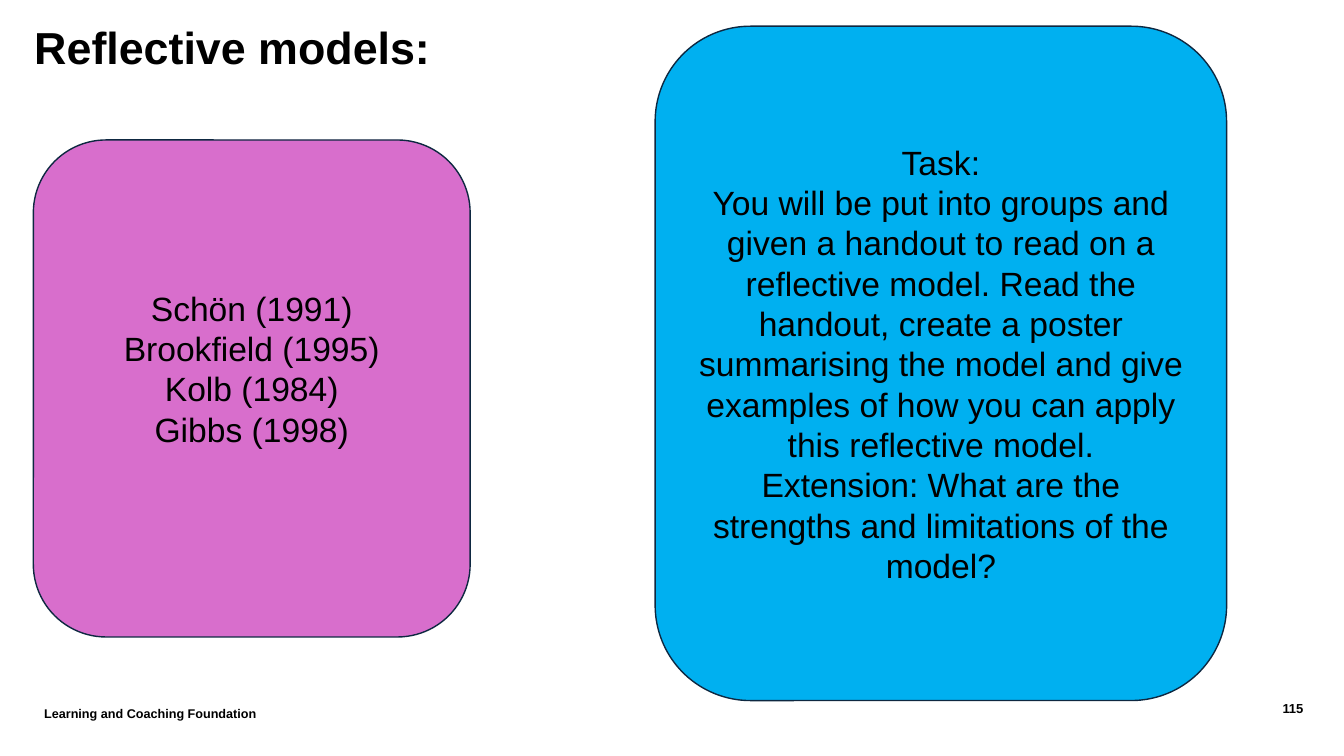
from pptx import Presentation
from pptx.dml.color import RGBColor
from pptx.enum.shapes import MSO_SHAPE
from pptx.enum.text import MSO_ANCHOR, PP_ALIGN
from pptx.util import Pt

BLACK = RGBColor(0x00, 0x00, 0x00)
NAVY = RGBColor(0x0E, 0x28, 0x41)
PINK = RGBColor(0xD8, 0x6E, 0xCC)
BLUE = RGBColor(0x00, 0xB0, 0xF0)

MODELS = ["Schön (1991)", "Brookfield (1995)", "Kolb (1984)", "Gibbs (1998)"]
TASK = [
    "Task:",
    "You will be put into groups and given a handout to read on a reflective "
    "model. Read the handout, create a poster summarising the model and give "
    "examples of how you can apply this reflective model.",
    "Extension: What are the strengths and limitations of the model?",
]


def set_attrs(target, values):
    for name, value in values.items():
        setattr(target, name, value)


def write(tf, lines, size, bold=False, align=PP_ALIGN.LEFT, spacing=None):
    tf.word_wrap = True
    for i, line in enumerate(lines):
        p = tf.paragraphs[0] if i == 0 else tf.add_paragraph()
        set_attrs(p, {"alignment": align, "line_spacing": spacing})
        r = p.add_run()
        r.text = line
        set_attrs(r.font, {"name": "Arial", "size": Pt(size), "bold": bold})
        r.font.color.rgb = BLACK


def add_label(s, box, text, size, inset=True, **layout):
    sp = s.shapes.add_textbox(*map(Pt, box))
    tf = sp.text_frame
    if not inset:
        sides = ("left", "top", "right", "bottom")
        set_attrs(tf, {f"margin_{side}": 0 for side in sides})
    write(tf, [text], size, bold=True, **layout)


def add_card(s, box, fill, lines, bottom=3.6):
    sp = s.shapes.add_shape(MSO_SHAPE.ROUNDED_RECTANGLE, *map(Pt, box))
    sp.shadow.inherit = False
    sp.fill.solid()
    sp.fill.fore_color.rgb = fill
    sp.line.color.rgb = NAVY
    sp.line.width = Pt(1)
    tf = sp.text_frame
    set_attrs(tf, {"vertical_anchor": MSO_ANCHOR.MIDDLE, "margin_bottom": Pt(bottom)})
    write(tf, lines, 24, align=PP_ALIGN.CENTER, spacing=Pt(28.8))


def main():
    prs = Presentation()
    set_attrs(prs, {"slide_width": Pt(960), "slide_height": Pt(540)})
    s = prs.slides.add_slide(prs.slide_layouts[6])
    add_label(s, (24.5, 26, 885.6, 73.4), "Reflective models:", 32,
              inset=False, spacing=Pt(26.7))
    add_label(s, (835.2, 500.4, 95.8, 28.8), "115", 9.3,
              inset=False, align=PP_ALIGN.RIGHT)
    add_card(s, (23.8, 100, 312, 355), PINK, MODELS, bottom=32.4)
    add_card(s, (468, 18.7, 408.2, 481.7), BLUE, TASK)
    add_label(s, (24.5, 500.4, 807, 28.8), "Learning and Coaching Foundation", 9)
    prs.save("out.pptx")


if __name__ == "__main__":
    main()
